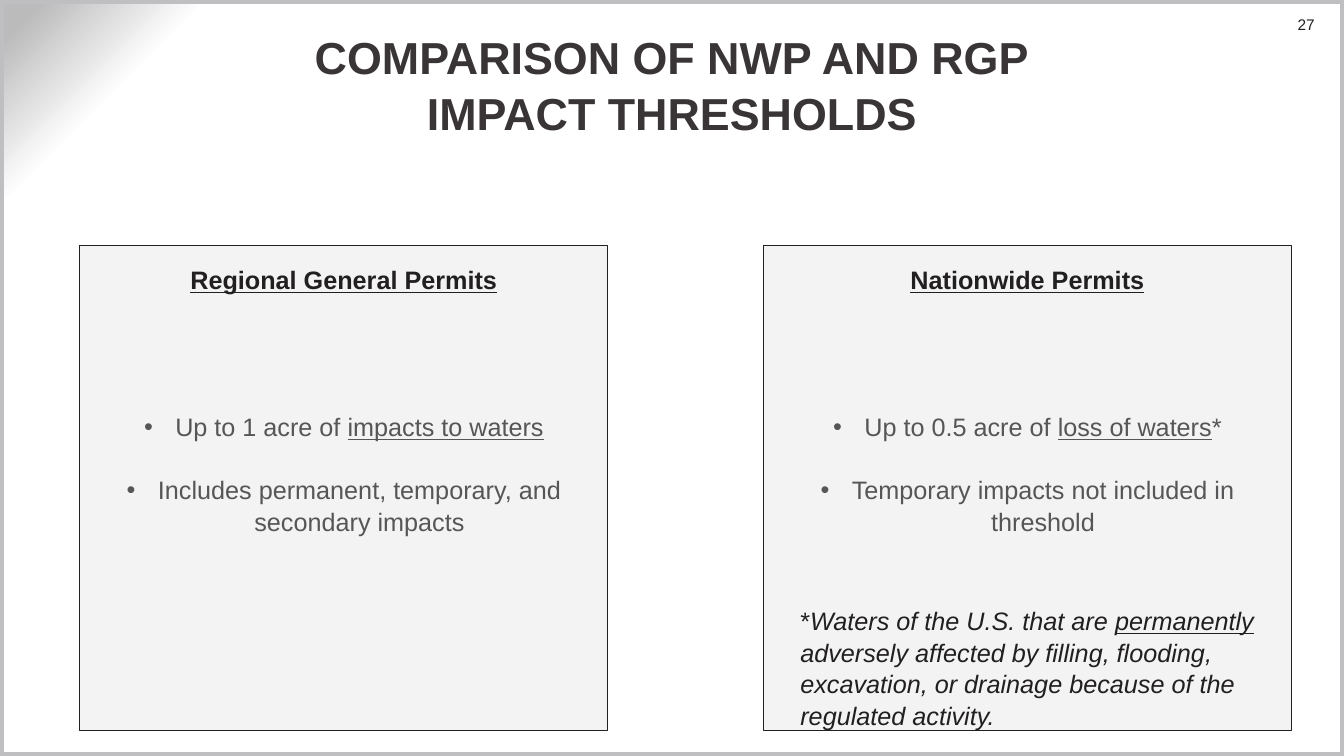
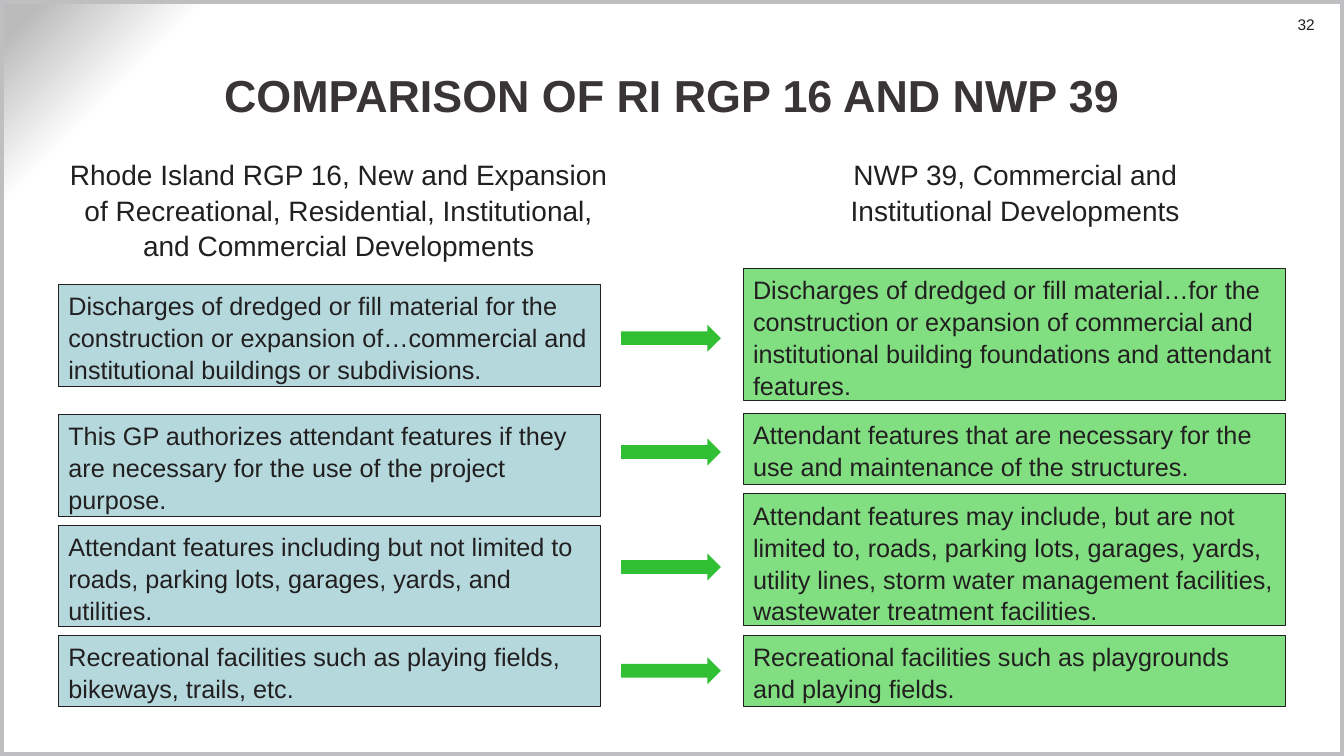
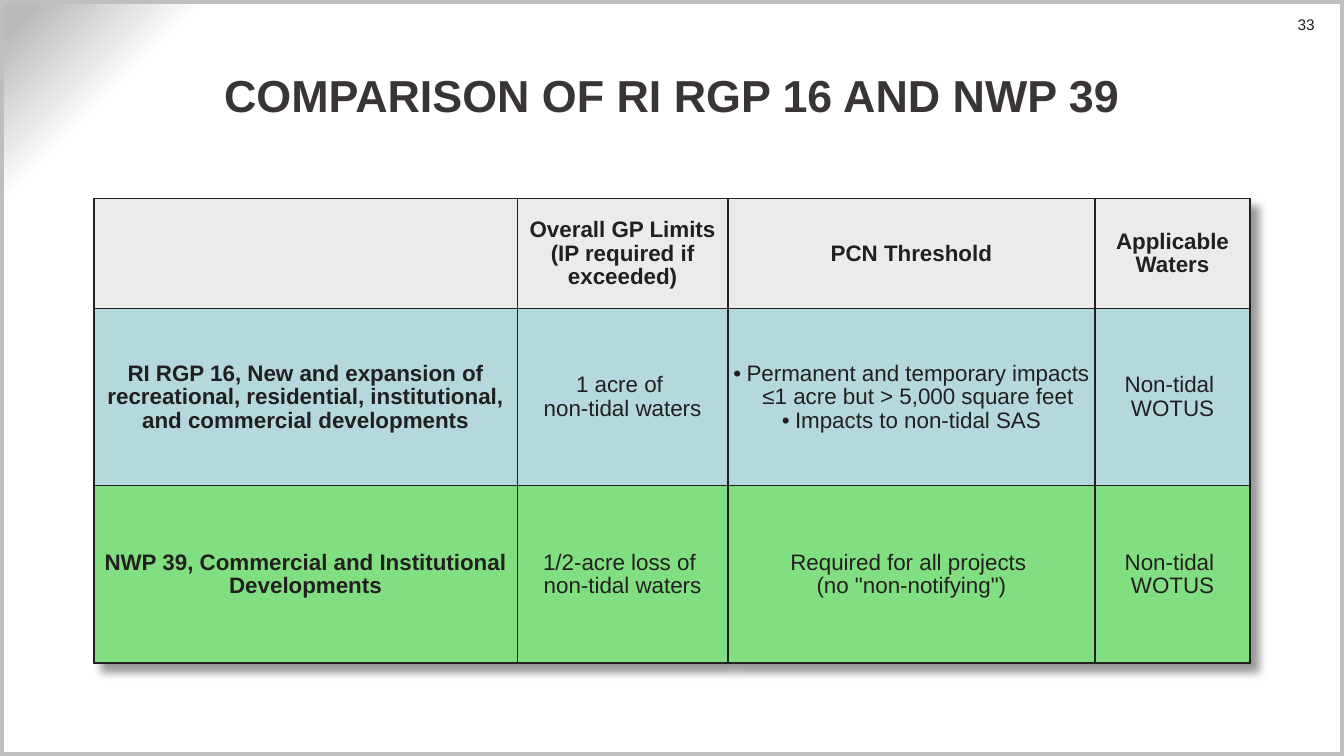
from dataclasses import dataclass

from lxml import etree
from pptx import Presentation
from pptx.dml.color import RGBColor
from pptx.enum.shapes import MSO_SHAPE
from pptx.enum.text import MSO_ANCHOR, MSO_AUTO_SIZE, PP_ALIGN
from pptx.oxml import parse_xml
from pptx.oxml.ns import nsdecls, qn
from pptx.util import Emu, Pt

PX = 9144
FONT = "Arial"
LINE_SPACING = 1.05
TABLE_SPACING = 0.95

INK = RGBColor(0x22, 0x1F, 0x20)
TITLE_INK = RGBColor(0x39, 0x34, 0x36)
LIST_INK = RGBColor(0x56, 0x55, 0x57)
FRAME_GREY = RGBColor(0xBF, 0xBF, 0xC2)
PANEL_GREY = RGBColor(0xF2, 0xF2, 0xF2)
HEADER_GREY = RGBColor(0xEB, 0xEB, 0xEA)
RGP_BLUE = RGBColor(0xB5, 0xD8, 0xDD)
NWP_GREEN = RGBColor(0x81, 0xDF, 0x81)
ARROW_GREEN = RGBColor(0x18, 0xB8, 0x1C)

LEFT, CENTER, RIGHT = PP_ALIGN.LEFT, PP_ALIGN.CENTER, PP_ALIGN.RIGHT
TOP, MIDDLE = MSO_ANCHOR.TOP, MSO_ANCHOR.MIDDLE
RECTANGLE, ARROW = MSO_SHAPE.RECTANGLE, MSO_SHAPE.RIGHT_ARROW
NO_AUTOFIT = MSO_AUTO_SIZE.NONE

BACKGROUND = f"""<a:gradFill {nsdecls("a")} rotWithShape="1"><a:gsLst>
<a:gs pos="87000"><a:srgbClr val="FFFFFF"/></a:gs>
<a:gs pos="90000"><a:srgbClr val="FFFFFF"/></a:gs>
<a:gs pos="98000"><a:srgbClr val="BBBBBC"/></a:gs></a:gsLst>
<a:path path="circle"><a:fillToRect l="100000" t="100000"/></a:path></a:gradFill>"""

TABLE_SHADOW = f"""<a:effectLst {nsdecls("a")}>
<a:outerShdw blurRad="76200" dist="101600" dir="2700000" algn="tl" rotWithShape="0">
<a:srgbClr val="000000"><a:alpha val="40000"/></a:srgbClr></a:outerShdw></a:effectLst>"""


@dataclass(frozen=True)
class Box:
    left: int
    top: int
    width: int
    height: int


@dataclass(frozen=True)
class Run:
    text: str
    underline: bool = False
    italic: bool = False


@dataclass(frozen=True)
class Permit:
    heading: str
    left: int
    limits: tuple


@dataclass(frozen=True)
class Provision:
    text: str
    top: int
    height: int


@dataclass(frozen=True)
class Cell:
    lines: tuple
    bold: bool = False
    bullet_indent: int = 0


PERMITS = (
    Permit("Regional General Permits", 79, (
        (Run("Up to 1 acre of "), Run("impacts to waters", underline=True)),
        "Includes permanent, temporary, and secondary impacts",
    )),
    Permit("Nationwide Permits", 757, (
        (Run("Up to 0.5 acre of "), Run("loss of waters", underline=True), Run("*")),
        "Temporary impacts not included in threshold",
    )),
)

LOSS_NOTE = (
    Run("*"),
    Run("Waters of the U.S. that are ", italic=True),
    Run("permanently ", underline=True, italic=True),
    Run("adversely affected by filling, flooding, excavation, or drainage because of "
        "the regulated activity.", italic=True),
)

RGP_PROVISIONS = (
    Provision("Discharges of dredged or fill material for the construction or expansion "
              "of…commercial and institutional buildings or subdivisions.", 282, 101),
    Provision("This GP authorizes attendant features if they are necessary for the use "
              "of the project purpose.", 411, 101),
    Provision("Attendant features including but not limited to roads, parking lots, "
              "garages, yards, and utilities.", 521, 101),
    Provision("Recreational facilities such as playing fields, bikeways, trails, etc.",
              630, 71),
)

NWP_PROVISIONS = (
    Provision("Discharges of dredged or fill material…for the construction or expansion "
              "of commercial and institutional building foundations and attendant "
              "features.", 266, 131),
    Provision("Attendant features that are necessary for the use and maintenance of the "
              "structures.", 410, 71),
    Provision("Attendant features may include, but are not limited to, roads, parking "
              "lots, garages, yards, utility lines, storm water management facilities, "
              "wastewater treatment facilities.", 490, 131),
    Provision("Recreational facilities such as playgrounds and playing fields.", 630, 71),
)

ARROW_TOPS = (322, 435, 549, 652)

COLUMN_WIDTHS = (420, 209, 364, 154)
ROW_HEIGHTS = (109, 176, 176)
ROW_FILLS = (HEADER_GREY, RGP_BLUE, NWP_GREEN)
WATERS = Cell(("Non-tidal ", "WOTUS"))
THRESHOLDS = (
    (
        Cell(()),
        Cell(("Overall GP Limits (IP required if exceeded)",), bold=True),
        Cell(("PCN Threshold",), bold=True),
        Cell(("Applicable Waters",), bold=True),
    ),
    (
        Cell(("RI RGP 16, New and expansion of recreational, residential, "
              "institutional, and commercial developments",), bold=True),
        Cell(("1 acre of ", "non-tidal waters")),
        Cell(("Permanent and temporary impacts ≤1 acre but > 5,000 square feet",
              "Impacts to non-tidal SAS"), bullet_indent=13),
        WATERS,
    ),
    (
        Cell(("NWP 39, Commercial and Institutional Developments",), bold=True),
        Cell(("1/2-acre loss of ", "non-tidal waters")),
        Cell(("Required for all projects ", '(no "non-notifying")')),
        WATERS,
    ),
)


def px(length: int) -> Emu:
    return Emu(length * PX)


def place(shape, box: Box) -> None:
    shape.left, shape.top = px(box.left), px(box.top)
    shape.width, shape.height = px(box.width), px(box.height)


def write(frame, *paragraphs, size=18, color=INK, bold=False, underline=False,
          align=LEFT, anchor=TOP, bullet_indent=0, gap=0, spacing=LINE_SPACING,
          margins=(10, 5, 10, 5)) -> None:
    frame.word_wrap = True
    frame.auto_size = NO_AUTOFIT
    frame.vertical_anchor = anchor
    (frame.margin_left, frame.margin_top,
     frame.margin_right, frame.margin_bottom) = map(px, margins)
    write_paragraphs(frame, paragraphs, size, color, bold, underline, align,
                     bullet_indent, gap, spacing)


def write_paragraphs(frame, paragraphs, size, color, bold, underline, align,
                     bullet_indent, gap, spacing) -> None:
    for index, content in enumerate(paragraphs):
        paragraph = frame.add_paragraph() if index else frame.paragraphs[0]
        paragraph.alignment = align
        paragraph.line_spacing = spacing
        paragraph.space_before = Pt(gap if index else 0)
        properties = paragraph._p.get_or_add_pPr()
        properties.set("marL", str(px(bullet_indent)))
        properties.set("indent", str(-px(bullet_indent)))
        if bullet_indent:
            etree.SubElement(properties, qn("a:buFont")).set("typeface", FONT)
            etree.SubElement(properties, qn("a:buChar")).set("char", "•")
        else:
            etree.SubElement(properties, qn("a:buNone"))
        for part in (Run(content),) if isinstance(content, str) else content:
            for line_index, line in enumerate(part.text.split("\n")):
                if line_index:
                    paragraph.add_line_break()
                run = paragraph.add_run()
                run.text = line
                run.font.name, run.font.size = FONT, Pt(size)
                run.font.color.rgb = color
                run.font.bold = bold
                run.font.italic = part.italic
                run.font.underline = underline or part.underline


def paint(shape, fill=None, line=None, line_width=0.75, opacity=100) -> None:
    shape.shadow.inherit = False
    if fill is None:
        shape.fill.background()
    else:
        shape.fill.solid()
        shape.fill.fore_color.rgb = fill
        if opacity < 100:
            tint = shape.element.spPr.find(qn("a:solidFill")).find(qn("a:srgbClr"))
            etree.SubElement(tint, qn("a:alpha")).set("val", str(opacity * 1000))
    if line is None:
        shape.line.fill.background()
    else:
        shape.line.color.rgb = line
        shape.line.width = Pt(line_width)


def add_figure(slide, kind, box: Box, **look):
    figure = slide.shapes.add_shape(
        kind, px(box.left), px(box.top), px(box.width), px(box.height))
    paint(figure, **look)
    return figure


def add_text(slide, box: Box, *paragraphs, **style) -> None:
    label = slide.shapes.add_textbox(
        px(box.left), px(box.top), px(box.width), px(box.height))
    write(label.text_frame, *paragraphs, **style)


def style_master(prs) -> None:
    master = prs.slide_master
    master.background.fill.gradient()
    old_gradient = master.element.find(".//" + qn("p:bgPr")).find(qn("a:gradFill"))
    old_gradient.getparent().replace(old_gradient, parse_xml(BACKGROUND))
    title_style = master.element.find(".//" + qn("p:titleStyle"))
    title_style.find(".//" + qn("a:defRPr")).set("sz", "3200")


def move_frame_to_master(prs, slide) -> None:
    frame = add_figure(slide, RECTANGLE, Box(0, 0, 1333, 750),
                       line=FRAME_GREY, line_width=6)
    frame.element.nvSpPr.cNvPr.set("id", "99")
    prs.slide_master.shapes.element.append(frame.element)


def add_slide(prs, layout: str, title: str, number: int, title_top: int = 47):
    slide = prs.slides.add_slide(prs.slide_layouts.get_by_name(layout))
    place(slide.shapes.title, Box(107, title_top, 1119, 91))
    write(slide.shapes.title.text_frame, title, size=32, color=TITLE_INK, bold=True,
          align=CENTER, anchor=MIDDLE, margins=(5, 0, 5, 0))
    add_text(slide, Box(1244, 14, 60, 19), str(number), size=11, align=RIGHT,
             margins=(10, 0, 0, 0))
    return slide


def build_impact_thresholds(prs) -> None:
    slide = add_slide(prs, "Two Content", "COMPARISON OF NWP AND RGP\nIMPACT THRESHOLDS",
                      27, title_top=37)
    move_frame_to_master(prs, slide)
    for index, permit in enumerate(PERMITS, start=1):
        panel = slide.placeholders[index]
        place(panel, Box(permit.left, 244, 524, 481))
        paint(panel, fill=PANEL_GREY, line=INK, opacity=89)
        write(panel.text_frame, *permit.limits, color=LIST_INK, align=CENTER,
              anchor=MIDDLE, bullet_indent=31, gap=22, margins=(10, 5, 10, 35))
        add_text(slide, Box(permit.left + 27, 256, 470, 40), permit.heading,
                 bold=True, underline=True, align=CENTER)
    add_text(slide, Box(784, 594, 493, 131), LOSS_NOTE)


def build_provisions(prs) -> None:
    slide = add_slide(prs, "Title and Content", "COMPARISON OF RI RGP 16 AND NWP 39", 32)
    rgp_heading = slide.placeholders[1]
    place(rgp_heading, Box(58, 150, 556, 116))
    write(rgp_heading.text_frame,
          "Rhode Island RGP 16, New and Expansion of Recreational, Residential, "
          "Institutional, and Commercial Developments", size=20, align=CENTER)
    add_text(slide, Box(770, 150, 474, 91),
             "NWP 39, Commercial and Institutional Developments", size=20, align=CENTER)
    for left, fill, provisions in ((58, RGP_BLUE, RGP_PROVISIONS),
                                   (737, NWP_GREEN, NWP_PROVISIONS)):
        for provision in provisions:
            card = add_figure(slide, RECTANGLE,
                              Box(left, provision.top, 538, provision.height),
                              fill=fill, line=INK)
            write(card.text_frame, provision.text)
    for top in ARROW_TOPS:
        add_figure(slide, ARROW, Box(616, top, 99, 27), fill=ARROW_GREEN, opacity=89)


def set_borders(cell, row: int, column: int) -> None:
    outer_edges = {
        "a:lnL": column == 0,
        "a:lnR": column == len(COLUMN_WIDTHS) - 1,
        "a:lnT": row == 0,
        "a:lnB": row == len(ROW_HEIGHTS) - 1,
    }
    properties = cell._tc.get_or_add_tcPr()
    for position, (tag, is_outer) in enumerate(outer_edges.items()):
        edge = etree.Element(qn(tag), w=str(Pt(1.5 if is_outer else 1)))
        ink = etree.SubElement(edge, qn("a:solidFill"))
        etree.SubElement(ink, qn("a:srgbClr")).set("val", str(INK))
        properties.insert(position, edge)


def build_threshold_table(prs) -> None:
    slide = add_slide(prs, "Title Only", "COMPARISON OF RI RGP 16 AND NWP 39", 33)
    table = slide.shapes.add_table(
        len(ROW_HEIGHTS), len(COLUMN_WIDTHS), px(93), px(197),
        px(sum(COLUMN_WIDTHS)), px(sum(ROW_HEIGHTS))).table
    table._tbl.tblPr.insert(0, parse_xml(TABLE_SHADOW))
    for column, width in enumerate(COLUMN_WIDTHS):
        table.columns[column].width = px(width)
    for row, (height, fill, cells) in enumerate(zip(ROW_HEIGHTS, ROW_FILLS, THRESHOLDS)):
        table.rows[row].height = px(height)
        for column, content in enumerate(cells):
            cell = table.cell(row, column)
            cell.fill.solid()
            cell.fill.fore_color.rgb = fill
            set_borders(cell, row, column)
            cell.vertical_anchor = MIDDLE
            cell.margin_left = cell.margin_top = cell.margin_right = px(1)
            cell.margin_bottom = px(0)
            write_paragraphs(cell.text_frame, content.lines, 16, INK, content.bold,
                             False, CENTER, content.bullet_indent, 0, TABLE_SPACING)


def main() -> None:
    prs = Presentation()
    prs.slide_width, prs.slide_height = px(1333), px(750)
    style_master(prs)
    build_impact_thresholds(prs)
    build_provisions(prs)
    build_threshold_table(prs)
    prs.save("out.pptx")


if __name__ == "__main__":
    main()
